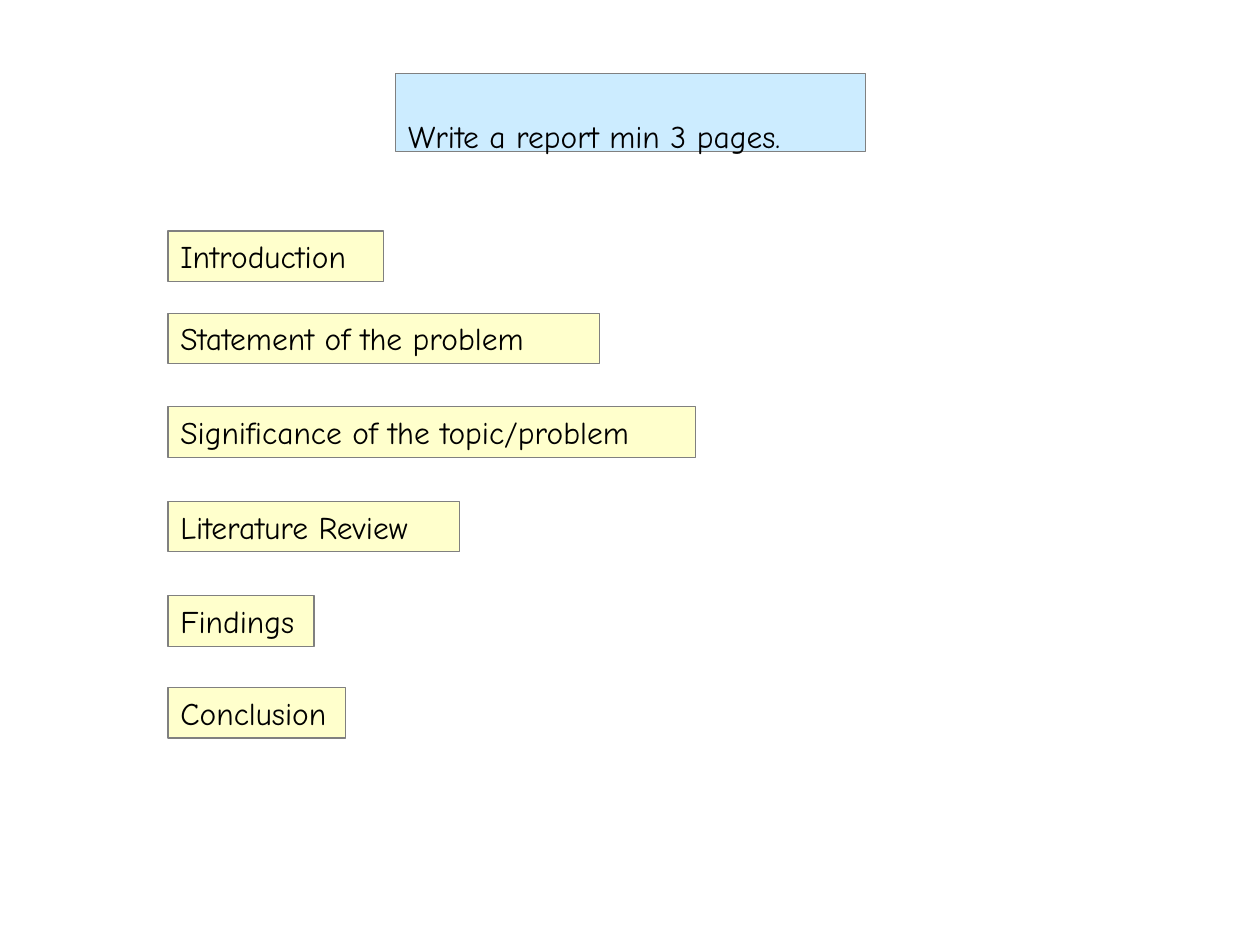
import pptx
import pptx.util
import pptx.dml.color
import pptx.enum.text

Pt = pptx.util.Pt


def color(value):
    return pptx.dml.color.RGBColor.from_string(value)


class ReportSlide:
    font = {"name": "Comic Neue", "size": Pt(18), "bold": False}
    frame = {
        "word_wrap": True,
        "auto_size": pptx.enum.text.MSO_AUTO_SIZE.NONE,
        "vertical_anchor": pptx.enum.text.MSO_ANCHOR.TOP,
    }
    text_color = "000000"
    line_color = "808080"

    def __init__(self, prs):
        self.s = prs.slides.add_slide(prs.slide_layouts[5])

    def style(self, sp, text, fill, spacing=1.0):
        sp.fill.solid()
        sp.fill.fore_color.rgb = color(fill)
        sp.line.color.rgb = color(self.line_color)
        sp.line.width = Pt(0.75)
        tf = sp.text_frame
        for name, value in self.frame.items():
            setattr(tf, name, value)
        p = tf.paragraphs[0]
        p.alignment = pptx.enum.text.PP_ALIGN.LEFT
        p.line_spacing = spacing
        r = p.add_run()
        r.text = text
        for name, value in self.font.items():
            setattr(r.font, name, value)
        r.font.color.rgb = color(self.text_color)

    def title(self, text, left, top, width, height):
        sp = self.s.shapes.title
        box = {"left": left, "top": top, "width": width, "height": height}
        for name, value in box.items():
            setattr(sp, name, Pt(value))
        self.style(sp, text, "CCECFF", spacing=2.0)

    def section(self, text, left, top, width, height=28.8):
        sp = self.s.shapes.add_textbox(Pt(left), Pt(top), Pt(width), Pt(height))
        self.style(sp, text, "FFFFCC")


def main():
    prs = pptx.Presentation()
    prs.slide_width, prs.slide_height = Pt(720), Pt(540)
    slide = ReportSlide(prs)
    slide.title("Write a report min 3 pages.", 226, 41.8, 268.5, 44.6)
    sections = [
        ("Introduction", 132, 123),
        ("Statement of the problem", 179, 246.5),
        ("Significance of the topic/problem", 232.5, 301.5),
        ("Literature Review", 286.5, 166.5),
        ("Findings", 340.5, 83.5),
        ("Conclusion", 393, 101.5),
    ]
    for text, top, width in sections:
        slide.section(text, 96, top, width)
    prs.save("out.pptx")


if __name__ == "__main__":
    main()
